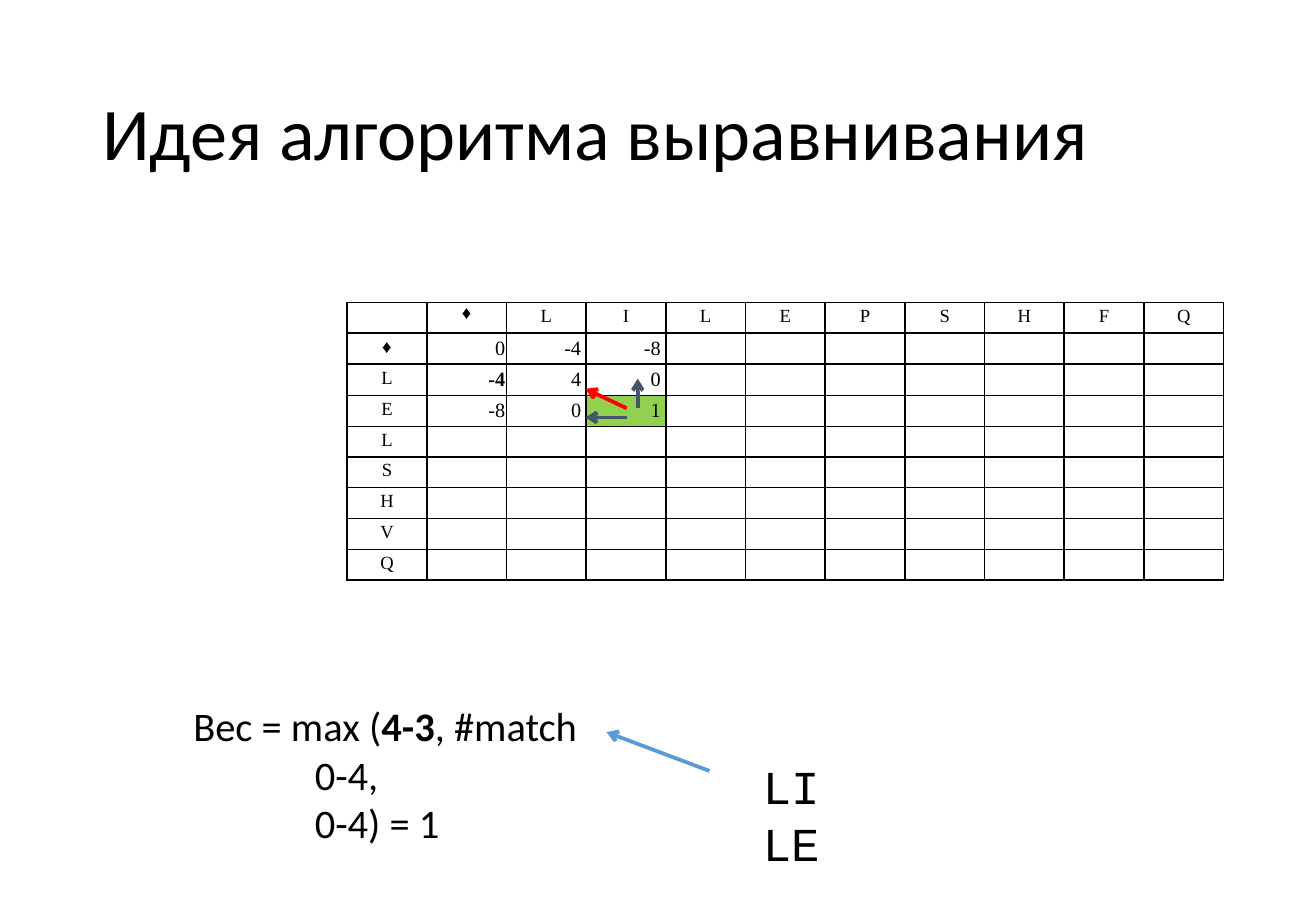
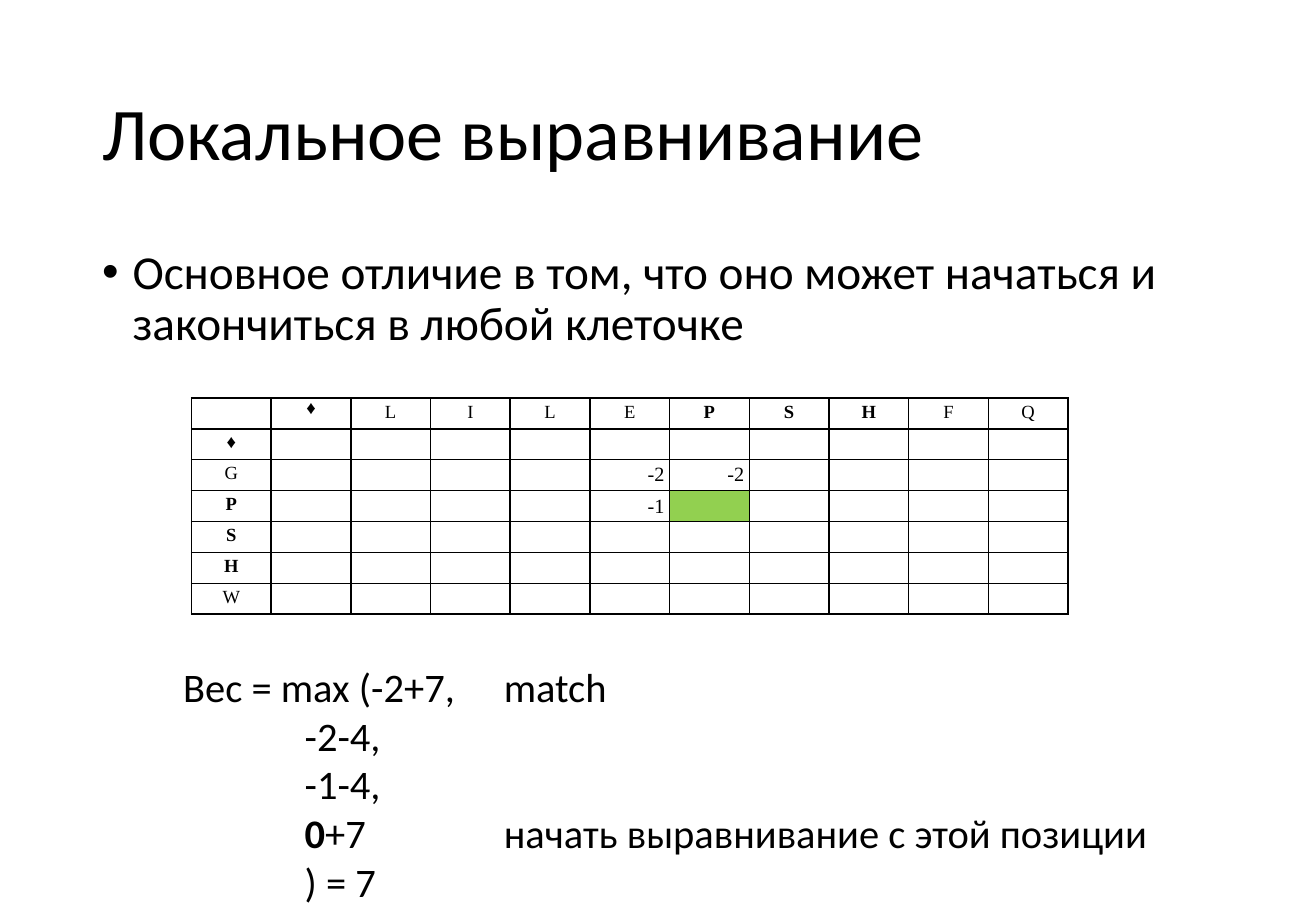
from lxml import etree
from pptx import Presentation
from pptx.dml.color import RGBColor
from pptx.enum.shapes import MSO_CONNECTOR
from pptx.enum.text import MSO_ANCHOR, PP_ALIGN
from pptx.oxml.ns import qn
from pptx.util import Pt

STRAIGHT = MSO_CONNECTOR.STRAIGHT
TOP, MIDDLE = MSO_ANCHOR.TOP, MSO_ANCHOR.MIDDLE
LEFT, CENTER, RIGHT = PP_ALIGN.LEFT, PP_ALIGN.CENTER, PP_ALIGN.RIGHT

COLORS = {"text": "000000", "current": "92D050", "pointer": "5B9BD5",
          "step": "44546A", "best": "FF0000"}
SANS, SERIF, MONO = "Calibri", "Times New Roman", "Courier New"
COL_W, ROW_H = 47.25, 18.25
GAP = "♦"


def rgb(name):
    return RGBColor.from_string(COLORS[name])


def sub(parent, tag, **attrs):
    return etree.SubElement(parent, qn(tag), **attrs)


class Deck:
    def __init__(self, width, height):
        self.prs = Presentation()
        self.prs.slide_width, self.prs.slide_height = Pt(width), Pt(height)
        self.s = None

    def fill_paragraph(self, p, text, size, font, align=LEFT):
        """Fill a paragraph; parts between ** marks are bold."""
        p.alignment = align
        for i, part in enumerate(text.split("**")):
            if part:
                r = p.add_run()
                r.text = part
                r.font.size, r.font.name = Pt(size), font
                r.font.bold = i % 2 == 1
                r.font.color.rgb = rgb("text")

    def text(self, box, lines, size, font=SANS, anchor=TOP, spacing=None,
             tabs=(), bullet=False):
        tf = self.s.shapes.add_textbox(*map(Pt, box)).text_frame
        tf.word_wrap = True
        tf.vertical_anchor = anchor
        for i, line in enumerate(lines):
            p = tf.add_paragraph() if i else tf.paragraphs[0]
            pPr = p._p.get_or_add_pPr()
            if bullet:
                pPr.set("marL", str(Pt(18)))
                pPr.set("indent", str(Pt(-18)))
                sub(pPr, "a:buFont", typeface="Arial")
                sub(pPr, "a:buChar", char="•")
            if tabs:
                stops = sub(pPr, "a:tabLst")
                for pos in tabs:
                    sub(stops, "a:tab", pos=str(Pt(pos)), algn="l")
            if spacing:
                p.line_spacing = spacing
            self.fill_paragraph(p, line, size, font)

    def slide(self, title):
        self.s = self.prs.slides.add_slide(self.prs.slide_layouts[6])
        self.text((53.5, 29, 672.5, 104), [title], 44, anchor=MIDDLE, spacing=0.9)

    def matrix(self, left, top, across, down, scores, current):
        """Alignment grid: letters on two sides, scores by (row, column)."""
        rows, cols = len(down) + 1, len(across) + 1
        frame = self.s.shapes.add_table(rows, cols, Pt(left), Pt(top),
                                        Pt(cols * COL_W), Pt(rows * ROW_H))
        table = frame.table
        table.first_row = table.horz_banding = False
        for col in table.columns:
            col.width = Pt(COL_W)
        letters = {(0, c): t for c, t in enumerate(across, 1)}
        letters.update({(r, 0): t for r, t in enumerate(down, 1)})
        for r in range(rows):
            table.rows[r].height = Pt(ROW_H)
            for c in range(cols):
                self.cell(table.cell(r, c), letters.get((r, c)),
                          scores.get((r, c)), narrow=c == 1,
                          marked=(r, c) == current)

    def cell(self, cell, letter, score, narrow, marked):
        dx, dy = (0.75, 0) if narrow else (3, 2)
        cell.margin_left = cell.margin_right = Pt(dx)
        cell.margin_top = cell.margin_bottom = Pt(dy)
        p = cell.text_frame.paragraphs[0]
        if letter:
            self.fill_paragraph(p, letter, 11, SERIF, CENTER)
        elif score:
            cell.vertical_anchor = MIDDLE
            self.fill_paragraph(p, score, 12, SERIF, RIGHT)
        else:
            sub(p._p, "a:endParaRPr", sz="1100")
        # Borders come before the fill in the cell properties
        tcPr = cell._tc.get_or_add_tcPr()
        for side in ("a:lnL", "a:lnR", "a:lnT", "a:lnB"):
            ln = sub(tcPr, side, w=str(Pt(1)))
            sub(sub(ln, "a:solidFill"), "a:srgbClr", val=COLORS["text"])
        if marked:
            cell.fill.solid()
            cell.fill.fore_color.rgb = rgb("current")
        else:
            cell.fill.background()

    def arrow(self, start, end, color):
        sp = self.s.shapes.add_connector(STRAIGHT, *map(Pt, start + end))
        sp.line.color.rgb = rgb(color)
        sp.line.width = Pt(2.25)
        spPr = sp._element.spPr
        sub(spPr.find(qn("a:ln")), "a:tailEnd", type="arrow")
        sub(spPr, "a:effectLst")


def main():
    deck = Deck(780, 540)

    # Slide 1: one step of the global alignment
    deck.slide("Идея алгоритма выравнивания")
    deck.matrix(205.75, 179.25, GAP + "LILEPSHFQ", GAP + "LELSHVQ",
                {(1, 1): "0", (1, 2): "-4", (1, 3): "-8",
                 (2, 1): "**-4**", (2, 2): "4", (2, 3): "0",
                 (3, 1): "-8", (3, 2): "0", (3, 3): "1"}, current=(3, 3))
    deck.text((107.5, 412, 250, 94),
              ["Вес = max (**4-3**, #match", "\t0-4,", "\t0-4) = 1"],
              24, tabs=(72,))
    deck.text((445, 445.5, 60, 75), ["LI", "LE"], 28, MONO)
    for start, end, color in (
            ((420.5, 457), (359.5, 434), "pointer"),
            ((378, 242), (378, 224.5), "step"),
            ((371.5, 247.5), (347, 247.5), "step"),
            ((371.5, 242), (347, 230.5), "best")):
        deck.arrow(start, end, color)

    # Slide 2: local alignment
    deck.slide("Локальное выравнивание")
    deck.text((53.5, 144, 672.5, 75),
              ["Основное отличие в том, что оно может начаться и "
               "закончиться в любой клеточке"],
              28, spacing=0.9, bullet=True)
    bold = [f"**{letter}**" for letter in "PSH"]
    deck.matrix(113.5, 236, [*(GAP + "LILE"), *bold, "F", "Q"],
                [GAP, "G", *bold, "W"],
                {(2, 5): "-2", (2, 6): "-2", (3, 5): "-1"}, current=(3, 6))
    deck.text((101.5, 389, 600, 151),
              ["Вес = max (-2+7,\tmatch", "\t-2-4,", "\t-1-4,",
               "\t**0**+7\tначать выравнивание с этой позиции", "\t) = 7"],
              24, tabs=(72, 190))

    deck.prs.save("out.pptx")


if __name__ == "__main__":
    main()
